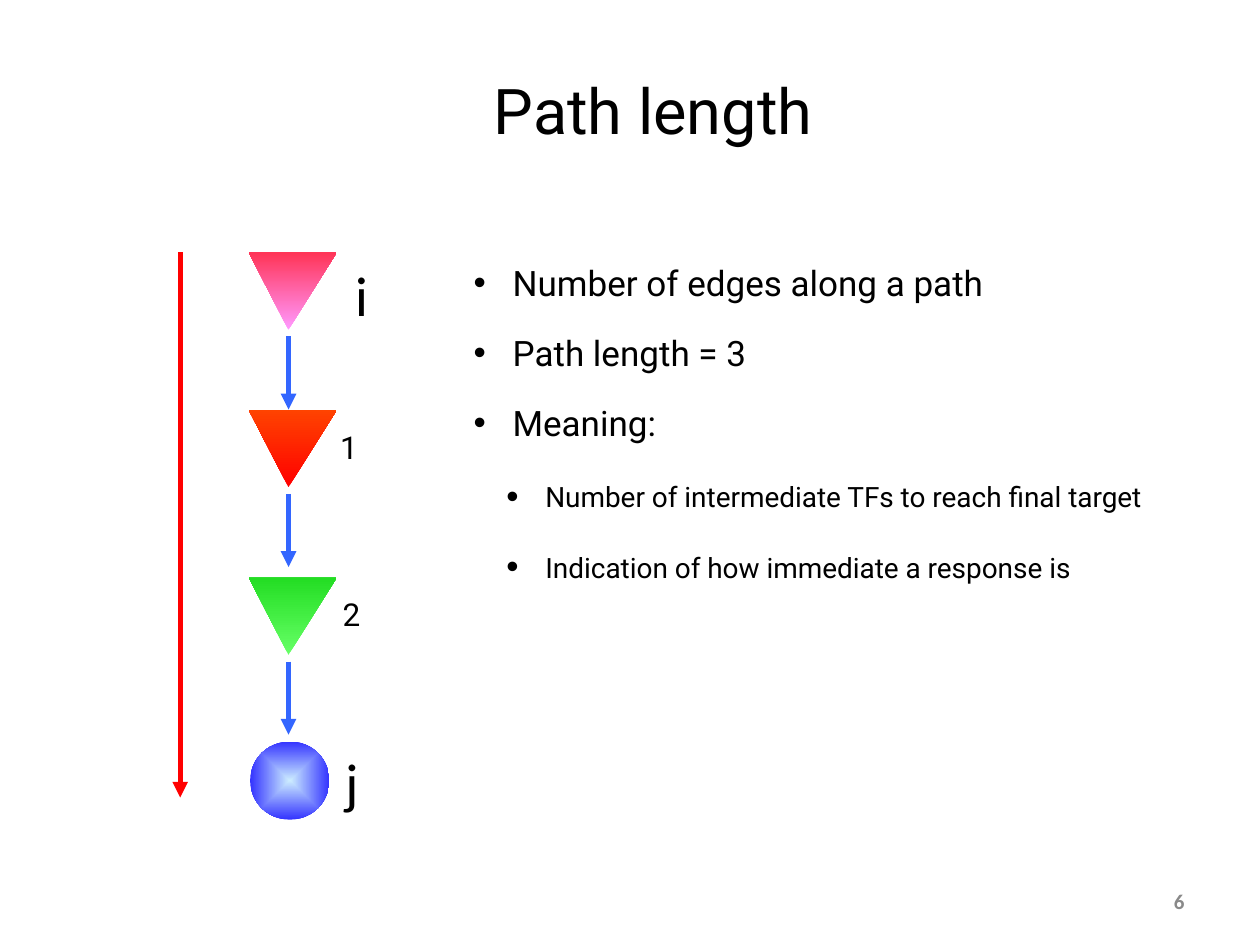
import pptx
import pptx.dml.color
import pptx.enum.shapes
import pptx.enum.text
import pptx.oxml
import pptx.oxml.ns
import pptx.util
from lxml import etree

RGBColor = pptx.dml.color.RGBColor
Inches = pptx.util.Inches
Pt = pptx.util.Pt
Shapes = pptx.enum.shapes.MSO_SHAPE
Align = pptx.enum.text.PP_ALIGN
Anchor = pptx.enum.text.MSO_ANCHOR
qn = pptx.oxml.ns.qn

BLACK = RGBColor(0x00, 0x00, 0x00)
GREY = RGBColor(0x89, 0x89, 0x89)
RED = RGBColor(0xFF, 0x00, 0x00)
ORANGE = RGBColor(0xFF, 0x66, 0x00)
PINK = RGBColor(0xFF, 0x99, 0xFF)
LIGHT_GREEN = RGBColor(0x66, 0xFF, 0x66)
GREEN = RGBColor(0x00, 0xCC, 0x00)
PALE_BLUE = RGBColor(0xCC, 0xEC, 0xFF)
BLUE = RGBColor(0x33, 0x33, 0xFF)
ARROW_BLUE = RGBColor(0x33, 0x66, 0xFF)

LINEAR = '<a:lin ang="5400000" scaled="1"/>'
FROM_CENTRE = ('<a:path path="shape"><a:fillToRect l="50000" t="50000" '
               'r="50000" b="50000"/></a:path>')

BULLETS = [
    (0, "Number of edges along a path"),
    (0, "Path length = 3"),
    (0, "Meaning:"),
    (1, "Number of intermediate TFs to reach final target"),
    (1, "Indication of how immediate a response is"),
]
# Text size, line spacing, left margin in inches, bullet size in percent
BULLET_LEVELS = [(20, 1.5, 0.31, 100), (16, 1.88, 0.57, 125)]


def write(paragraph, text, size, font="Roboto", color=BLACK, bold=False,
          align=Align.LEFT):
    run = paragraph.add_run()
    run.text = text
    run.font.size = Pt(size)
    run.font.name = font
    run.font.color.rgb = color
    run.font.bold = bold
    paragraph.alignment = align


def add_text_frame(slide, box, wrap=True, anchor=Anchor.TOP):
    frame = slide.shapes.add_textbox(*map(Inches, box)).text_frame
    frame.word_wrap = wrap
    frame.vertical_anchor = anchor
    return frame


def add_label(slide, box, text, size, wrap=True, anchor=Anchor.TOP,
              space_before=0, **text_format):
    paragraph = add_text_frame(slide, box, wrap, anchor).paragraphs[0]
    paragraph.space_before = Pt(space_before)
    write(paragraph, text, size, **text_format)


def add_arrow(slide, x, top, bottom, color):
    arrow = slide.shapes.add_connector(
        pptx.enum.shapes.MSO_CONNECTOR.STRAIGHT,
        Inches(x), Inches(top), Inches(x), Inches(bottom))
    arrow.line.color.rgb = color
    arrow.line.width = Pt(3)
    etree.SubElement(arrow.line._get_or_add_ln(), qn("a:tailEnd"), type="triangle")
    etree.SubElement(arrow._element.spPr, qn("a:effectLst"))


def add_node(slide, preset, box, start, end, direction, rotation):
    """Add a shape without outline, filled with a gradient from start to end."""
    shape = slide.shapes.add_shape(preset, *map(Inches, box))
    shape.shadow.inherit = False
    shape.line.fill.background()
    shape.rotation = rotation
    gradient = pptx.oxml.parse_xml(
        f'<a:gradFill {pptx.oxml.ns.nsdecls("a")} rotWithShape="0"><a:gsLst>'
        f'<a:gs pos="0"><a:srgbClr val="{start}"/></a:gs>'
        f'<a:gs pos="100000"><a:srgbClr val="{end}"/></a:gs>'
        f'</a:gsLst>{direction}</a:gradFill>')
    shape._element.spPr.find(qn("a:prstGeom")).addnext(gradient)
    return shape


def add_triangle(slide, box, start, end):
    triangle = add_node(slide, Shapes.ISOSCELES_TRIANGLE, box, start, end, LINEAR, 122)
    triangle.adjustments[0] = 0.489
    transform = triangle._element.spPr.find(qn("a:xfrm"))
    transform.set("flipH", "1")
    transform.set("flipV", "1")


def add_path_diagram(slide, left, top):
    """Draw the chain from i to j, with the whole path marked on its left."""
    add_arrow(slide, left, top, top + 4.33, RED)
    triangles = [(-0.14, PINK, RED), (1.11, RED, ORANGE), (2.44, LIGHT_GREEN, GREEN)]
    for offset, start, end in triangles:
        y = top + offset
        add_triangle(slide, (left + 0.44, y, 0.72, 0.59), start, end)
        add_arrow(slide, left + 0.86, y + 0.81, y + 1.39, ARROW_BLUE)
    add_node(slide, Shapes.OVAL, (left + 0.56, top + 3.88, 0.62, 0.63),
             PALE_BLUE, BLUE, FROM_CENTRE, 90)
    for text, x, y in [("i", 1.29, 0.02), ("j", 1.21, 3.88)]:
        add_label(slide, (left + x, top + y, 0.47, 0.64), text, 32, font="Calibri")
    for text, x, y in [("1", 1.17, 1.35), ("2", 1.19, 2.67)]:
        add_label(slide, (left + x, top + y, 0.38, 0.5), text, 18, wrap=False,
                  space_before=3.6)


def add_bullets(slide, box):
    frame = add_text_frame(slide, box)
    for index, (level, text) in enumerate(BULLETS):
        size, spacing, margin, bullet_size = BULLET_LEVELS[level]
        paragraph = frame.add_paragraph() if index else frame.paragraphs[0]
        paragraph.level = level
        paragraph.line_spacing = spacing
        paragraph.space_before = Pt(4)
        write(paragraph, text, size)
        properties = paragraph._p.get_or_add_pPr()
        properties.set("marL", str(Inches(margin)))
        properties.set("indent", str(Inches(-0.31)))
        etree.SubElement(properties, qn("a:buSzPct"), val=str(bullet_size * 1000))
        etree.SubElement(properties, qn("a:buFont"), typeface="Arial")
        etree.SubElement(properties, qn("a:buChar"), char="•")


def main():
    presentation = pptx.Presentation()
    presentation.slide_width = Inches(10)
    presentation.slide_height = Inches(7.5)
    slide = presentation.slides.add_slide(presentation.slide_layouts[6])
    add_label(slide, (3.82, 0.52, 2.75, 0.71), "Path length", 36, wrap=False)
    add_path_diagram(slide, 1.43, 2)
    add_bullets(slide, (3.66, 1.86, 6.09, 3.3))
    add_label(slide, (7.17, 6.95, 2.33, 0.4), "6", 12, anchor=Anchor.MIDDLE,
              font="Calibri", color=GREY, bold=True, align=Align.RIGHT)
    presentation.save("out.pptx")


if __name__ == "__main__":
    main()
